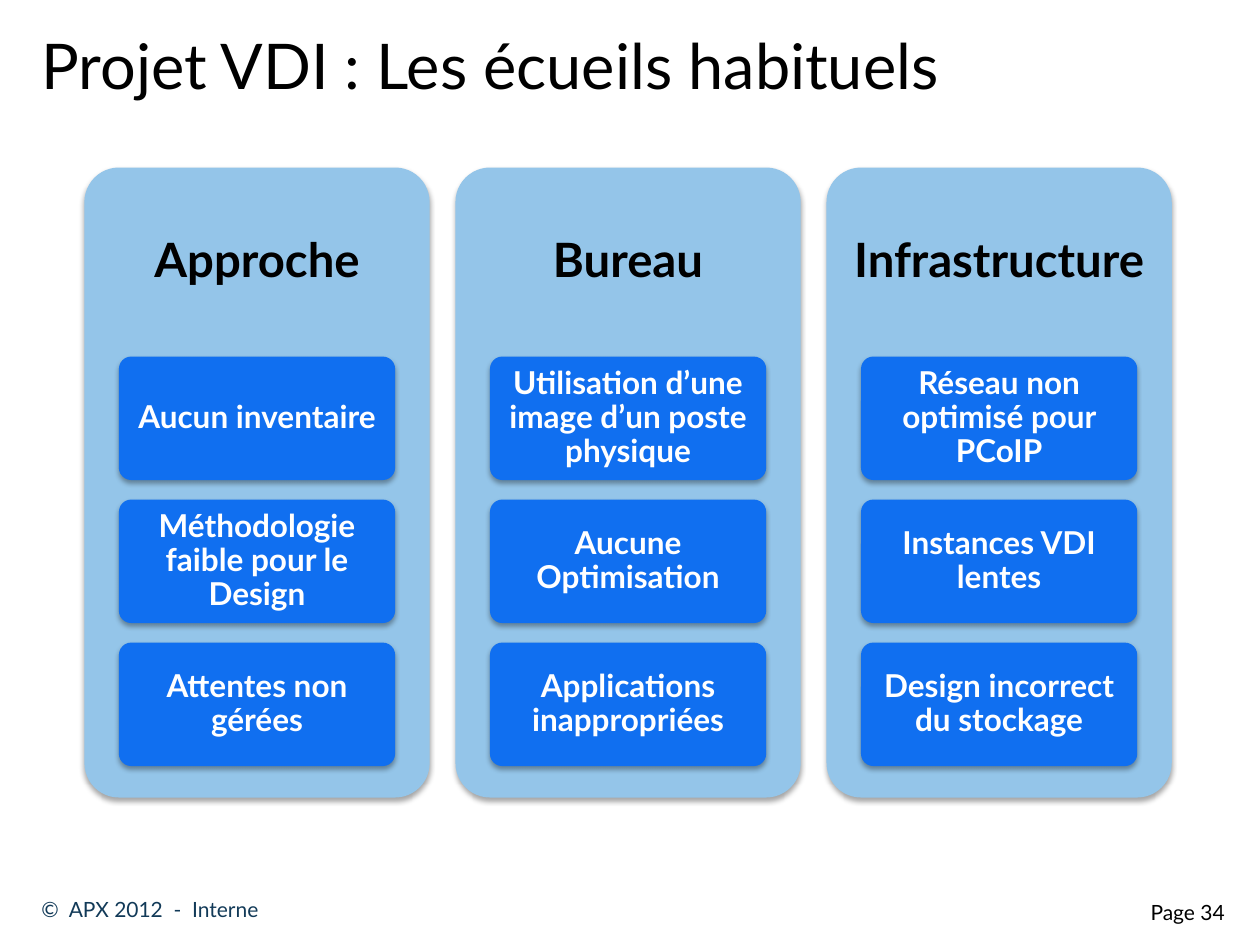
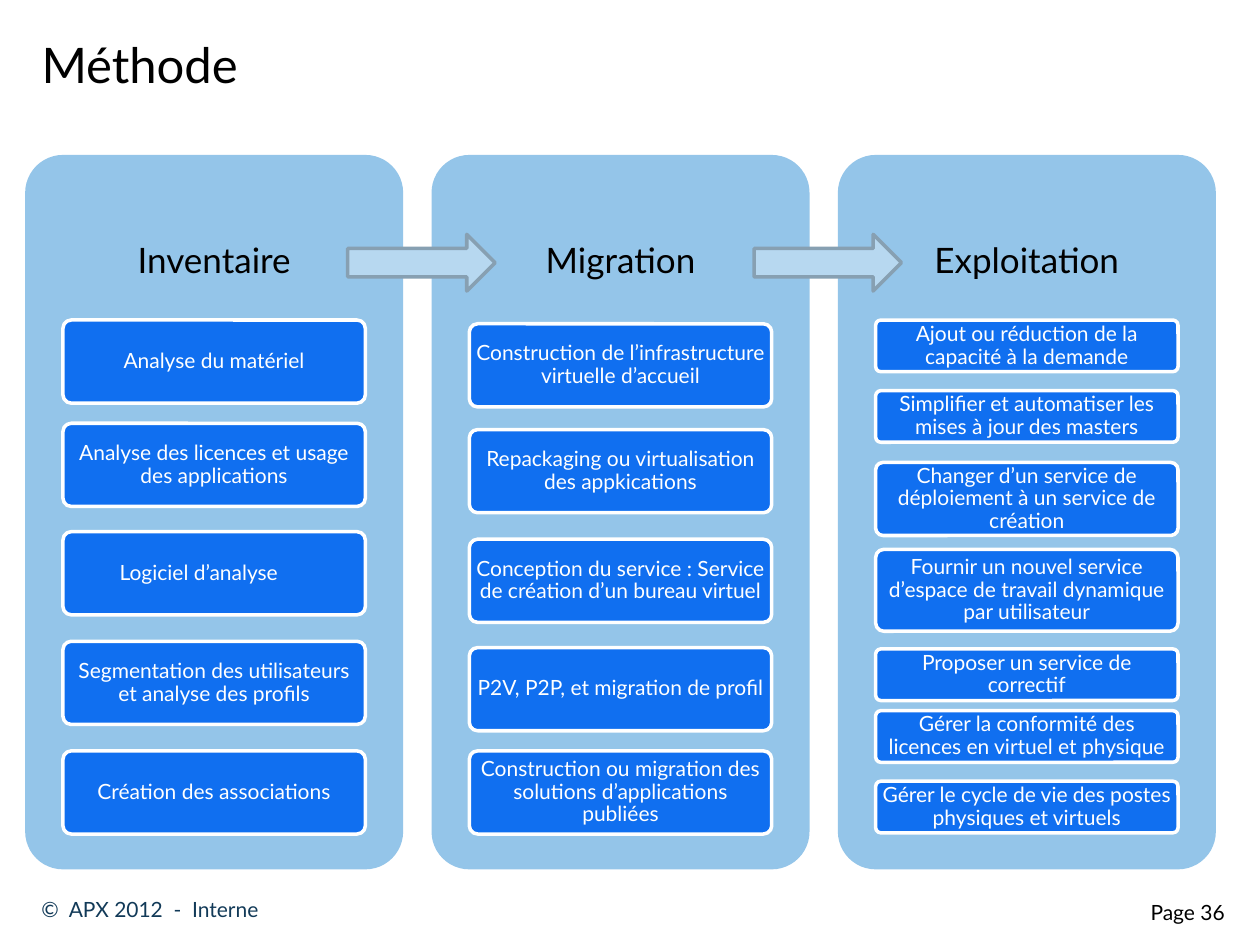
from dataclasses import dataclass

from lxml import etree
from pptx import Presentation
from pptx.dml.color import RGBColor
from pptx.enum.shapes import MSO_SHAPE
from pptx.enum.text import MSO_ANCHOR, MSO_AUTO_SIZE, PP_ALIGN
from pptx.oxml.ns import qn
from pptx.util import Inches, Pt

ROUNDED = MSO_SHAPE.ROUNDED_RECTANGLE
ARROW = MSO_SHAPE.RIGHT_ARROW
MIDDLE, TOP = MSO_ANCHOR.MIDDLE, MSO_ANCHOR.TOP
LEFT, CENTER, RIGHT = PP_ALIGN.LEFT, PP_ALIGN.CENTER, PP_ALIGN.RIGHT
NO_AUTOFIT = MSO_AUTO_SIZE.NONE

FONT = "Lato"
BLACK, WHITE, NAVY = "000000", "FFFFFF", "123A58"
PANEL_BLUE, ITEM_BLUE = "94C5E9", "106FF0"
ARROW_FILL, ARROW_LINE = "B7D8F0", "87A0B2"
HEADING_SHARE = 0.3
ITEM_INDENT = 0.1
CORNER = 0.1
TITLE_ONLY = 5


@dataclass(frozen=True)
class Area:
    """A rectangle in inches."""
    left: float
    top: float
    width: float
    height: float


@dataclass(frozen=True)
class Style:
    """How a text is set."""
    size: float
    color: str = BLACK
    bold: bool = False
    align: PP_ALIGN = CENTER
    anchor: MSO_ANCHOR = MIDDLE
    spacing: float = 0.9


@dataclass(frozen=True)
class Item:
    """A labelled block in a panel."""
    label: str
    top: float
    height: float


@dataclass(frozen=True)
class Panel:
    """A headed column of items."""
    heading: str
    items: list[Item]


@dataclass(frozen=True)
class Board:
    """The grid and look of a row of panels."""
    first: Area
    pitch: float
    heading: Style
    item: Style
    margin: float
    shadow: bool = False
    outline: str | None = None

    def column(self, index: int) -> Area:
        """Return the area of one panel."""
        first = self.first
        return Area(first.left + index * self.pitch, first.top, first.width, first.height)


def rgb(color: str) -> RGBColor:
    """Turn a hex string into a colour."""
    return RGBColor.from_string(color)


def place(area: Area) -> tuple:
    """Convert an area to lengths."""
    return tuple(Inches(value) for value in (area.left, area.top, area.width, area.height))


def write(frame, text: str, style: Style, margins=(0.1, 0.05, 0.1, 0.05)) -> None:
    """Write one styled paragraph into a text frame."""
    frame.text = text
    frame.word_wrap = True
    frame.auto_size = NO_AUTOFIT
    frame.vertical_anchor = style.anchor
    frame.margin_left, frame.margin_top, frame.margin_right, frame.margin_bottom = map(Inches, margins)
    para = frame.paragraphs[0]
    para.alignment = style.align
    para.line_spacing = style.spacing
    for span in para.runs:
        span.font.name = FONT
        span.font.size = Pt(style.size)
        span.font.bold = style.bold
        span.font.color.rgb = rgb(style.color)


def add_block(page, kind, area: Area, fill: str, line: str | None = None, shadow: bool = False):
    """Add a filled preset shape."""
    shape = page.shapes.add_shape(kind, *place(area))
    shape.fill.solid()
    shape.fill.fore_color.rgb = rgb(fill)
    if line:
        shape.line.color.rgb = rgb(line)
        shape.line.width = Pt(2)
    else:
        shape.line.fill.background()
    shape.shadow.inherit = False
    if shadow:
        add_shadow(shape)
    if kind == ROUNDED:
        shape.adjustments[0] = CORNER
    return shape


def add_shadow(shape) -> None:
    """Drop a soft shadow straight below a shape."""
    effects = shape._element.spPr.find(qn("a:effectLst"))
    outer = etree.SubElement(effects, qn("a:outerShdw"), blurRad=str(Pt(3.1)),
                             dist=str(Pt(1.8)), dir="5400000", rotWithShape="0")
    color = etree.SubElement(outer, qn("a:srgbClr"), val=BLACK)
    etree.SubElement(color, qn("a:alpha"), val="35000")


def add_text(page, area: Area, text: str, style: Style) -> None:
    """Add a text box."""
    write(page.shapes.add_textbox(*place(area)).text_frame, text, style)


def add_page(deck, title: str, title_size: float, number: int):
    """Add a page with its title and footer."""
    page = deck.slides.add_slide(deck.slide_layouts[TITLE_ONLY])
    heading = page.shapes.title
    heading.left, heading.top, heading.width, heading.height = place(Area(0.23, 0, 7.92, 1.02))
    write(heading.text_frame, title, Style(title_size, align=LEFT, spacing=1))
    add_text(page, Area(0.23, 7.07, 2.2, 0.3), "©  APX 2012  -  Interne",
             Style(12, NAVY, align=LEFT, anchor=TOP, spacing=1))
    add_text(page, Area(8.72, 7.09, 1.1, 0.3), f"Page {number}",
             Style(12, align=RIGHT, spacing=1))
    return page


def draw_board(page, board: Board, panels: list[Panel]) -> None:
    """Draw panels side by side with their items."""
    for index, panel in enumerate(panels):
        area = board.column(index)
        back = add_block(page, ROUNDED, area, PANEL_BLUE, shadow=board.shadow)
        write(back.text_frame, panel.heading, board.heading,
              (0, 0, 0, (1 - HEADING_SHARE) * area.height))
        for item in panel.items:
            spot = Area(area.left + ITEM_INDENT * area.width, item.top,
                        (1 - 2 * ITEM_INDENT) * area.width, item.height)
            block = add_block(page, ROUNDED, spot, ITEM_BLUE, board.outline, board.shadow)
            write(block.text_frame, item.label, board.item, (board.margin,) * 4)


def even_items(*labels: str) -> list[Item]:
    """Stack items at an equal pitch."""
    return [Item(label, 2.83 + row * 1.135, 0.98) for row, label in enumerate(labels)]


def items_at(height: float, rows: dict[float, str]) -> list[Item]:
    """Make items of one height from their tops."""
    return [Item(label, top, height) for top, label in rows.items()]


def build_pitfalls(deck) -> None:
    """Build the page on usual pitfalls."""
    page = add_page(deck, "Projet VDI : Les écueils habituels", 36, 34)
    board = Board(Area(0.67, 1.33, 2.74, 5), 2.945, Style(27, bold=True),
                  Style(18, WHITE, bold=True), 0.05, shadow=True)
    draw_board(page, board, [
        Panel("Approche", even_items("Aucun inventaire", "Méthodologie faible pour le Design",
                                     "Attentes non gérées")),
        Panel("Bureau", even_items("Utilisation d’une image d’un poste physique",
                                   "Aucune Optimisation", "Applications inappropriées")),
        Panel("Infrastructure", even_items("Réseau non optimisé pour PCoIP",
                                           "Instances VDI lentes",
                                           "Design incorrect du stockage")),
    ])


def build_method(deck) -> None:
    """Build the page on the three-step method."""
    page = add_page(deck, "Méthode", 28, 36)
    board = Board(Area(0.2, 1.23, 3, 5.67), 3.225, Style(20), Style(12, WHITE), 0.03,
                  outline=WHITE)
    panels = [
        Panel("Inventaire", items_at(0.66, {
            2.54: "Analyse du matériel",
            3.36: "Analyse des licences et usage des applications",
            4.22: "Logiciel d’analyse\t",
            5.09: "Segmentation des utilisateurs et analyse des profils",
            5.96: "Création des associations",
        })),
        Panel("Migration", items_at(0.66, {
            2.57: "Construction de l’infrastructure virtuelle d’accueil",
            3.41: "Repackaging ou virtualisation des appkications",
            4.28: "Conception du service : Service de création d’un bureau virtuel",
            5.14: "P2V, P2P, et migration de profil",
            5.96: "Construction ou migration des solutions d’applications publiées",
        })),
        Panel("Exploitation", [
            *items_at(0.41, {
                2.54: "Ajout ou réduction de la capacité à la demande",
                3.1: "Simplifier et automatiser les mises à jour des masters",
            }),
            Item("Changer d’un service de déploiement à un service de création", 3.67, 0.58),
            Item("Fournir un nouvel service d’espace de travail dynamique par utilisateur",
                 4.36, 0.65),
            *items_at(0.41, {
                5.15: "Proposer un service de correctif",
                5.64: "Gérer la conformité des licences en virtuel et physique",
                6.2: "Gérer le cycle de vie des postes physiques et virtuels",
            }),
        ]),
    ]
    draw_board(page, board, panels)
    for index in range(len(panels) - 1):
        add_block(page, ARROW, Area(board.column(index).left + 2.56, 1.86, 1.17, 0.45),
                  ARROW_FILL, ARROW_LINE)


def main() -> None:
    """Build and save the deck."""
    deck = Presentation()
    deck.slide_width, deck.slide_height = Inches(10), Inches(7.5)
    build_pitfalls(deck)
    build_method(deck)
    deck.save("out.pptx")


if __name__ == "__main__":
    main()
